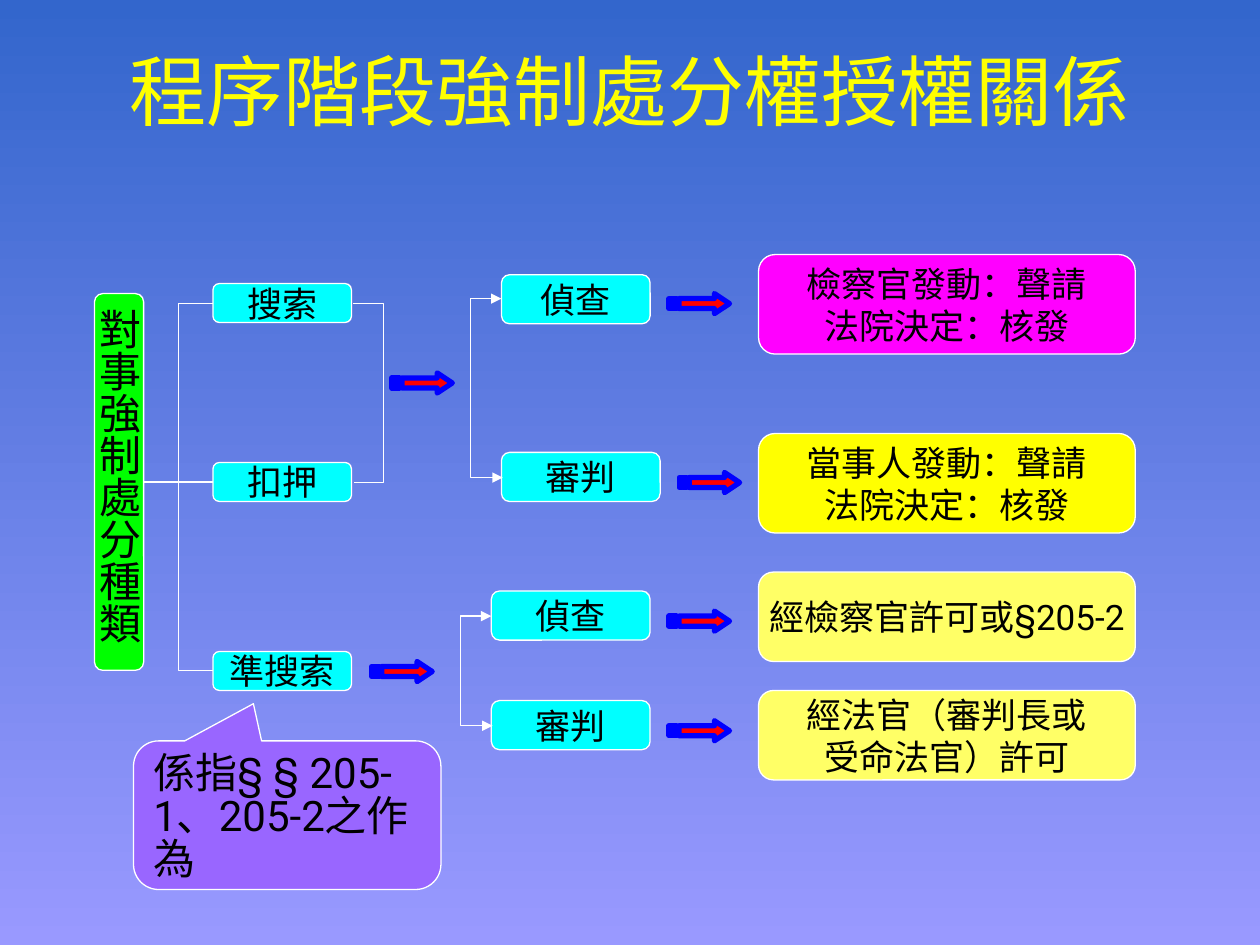
from lxml import etree
from pptx import Presentation
from pptx.dml.color import RGBColor
from pptx.enum.shapes import MSO_CONNECTOR, MSO_SHAPE
from pptx.enum.text import MSO_ANCHOR, PP_ALIGN
from pptx.oxml.ns import qn
from pptx.util import Inches, Pt

BOX, CALLOUT = MSO_SHAPE.FLOWCHART_ALTERNATE_PROCESS, MSO_SHAPE.ROUNDED_RECTANGULAR_CALLOUT
STRAIGHT, ELBOW = MSO_CONNECTOR.STRAIGHT, MSO_CONNECTOR.ELBOW
MIDDLE, TOP = MSO_ANCHOR.MIDDLE, MSO_ANCHOR.TOP
CENTER, LEFT = PP_ALIGN.CENTER, PP_ALIGN.LEFT

COLORS = {name: RGBColor.from_string(value) for name, value in {
    "sky": "3366CC", "lavender": "9999FF", "white": "FFFFFF", "black": "000000",
    "green": "00FF00", "cyan": "00FFFF", "magenta": "FF00FF", "yellow": "FFFF00",
    "pale": "FFFF66", "purple": "9966FF", "red": "FF0000", "blue": "0000FF",
}.items()}


def add_box(left, top, width, height, color, lines, size=20, kind=BOX):
    box = slide.shapes.add_shape(kind, Inches(left), Inches(top), Inches(width), Inches(height))
    box.shadow.inherit = False
    box.fill.solid()
    box.fill.fore_color.rgb = COLORS[color]
    box.line.color.rgb = COLORS["white"]
    box.line.width = Pt(0.75)
    frame = box.text_frame
    frame.word_wrap = kind == CALLOUT
    frame.vertical_anchor = TOP if kind == CALLOUT else MIDDLE
    for index, line in enumerate(lines):
        paragraph = frame.paragraphs[0] if index == 0 else frame.add_paragraph()
        paragraph.alignment = LEFT if kind == CALLOUT else CENTER
        run = paragraph.add_run()
        run.text = line
        run.font.size = Pt(size)
        run.font.name = "Roboto"
        run.font.color.rgb = COLORS["black"]
    return box


def add_link(kind, x1, y1, x2, y2, bend=None, arrows=False):
    link = slide.shapes.add_connector(kind, Inches(x1), Inches(y1), Inches(x2), Inches(y2))
    link.line.color.rgb = COLORS["white"]
    link.line.width = Pt(0.75)
    properties = link._element.spPr
    if bend is not None:
        guides = properties.find(qn("a:prstGeom")).get_or_add_avLst()
        etree.SubElement(guides, qn("a:gd"), name="adj1", fmla=f"val {bend * 100000}")
    if arrows:
        for end in ("a:headEnd", "a:tailEnd"):
            etree.SubElement(properties.find(qn("a:ln")), qn(end), type="triangle")
    etree.SubElement(properties, qn("a:effectLst"))
    return link


prs = Presentation()
prs.slide_width, prs.slide_height = Inches(10), Inches(7.5)
slide = prs.slides.add_slide(prs.slide_layouts[6])

# Background gradient, top to bottom
background = slide.background.fill
background.gradient()
background.gradient_angle = 270
for stop, color, position in zip(background.gradient_stops, ("sky", "lavender"), (0, 1)):
    stop.color.rgb = COLORS[color]
    stop.position = position

# Title
title = slide.shapes.add_textbox(Inches(0.33), Inches(0.25), Inches(9.34), Inches(0.93))
title.text_frame.word_wrap = True
title.text_frame.vertical_anchor = MIDDLE
heading = title.text_frame.paragraphs[0]
heading.alignment = CENTER
heading_run = heading.add_run()
heading_run.text = "程序階段強制處分權授權關係"
heading_run.font.size = Pt(44)
heading_run.font.name = "Arial"
heading_run.font.color.rgb = COLORS["yellow"]

# Root and the three kinds of measure
root = add_box(0.75, 2.33, 0.39, 2.99, "green", ["對事強制處分種類"], 24)
root.text_frame._txBody.bodyPr.set("vert", "eaVert")
measures = [add_box(1.69, top, 1.1, 0.31, "cyan", [label])
            for top, label in ((2.25, "搜索"), (3.67, "扣押"), (5.17, "準搜索"))]

# Links from the root
for y in (2.41, 5.32):
    add_link(ELBOW, 1.14, 3.83, 1.69, y)
seizure_link = add_link(STRAIGHT, 1.14, 3.83, 1.69, 3.83)
seizure_link.begin_connect(root, 3)
seizure_link.end_connect(measures[1], 1)

# Procedural stages
for left, top, width, label in (
    (3.98, 2.18, 1.18, "偵查"), (3.98, 3.59, 1.26, "審判"),
    (3.9, 4.69, 1.26, "偵查"), (3.9, 5.56, 1.26, "審判"),
):
    add_box(left, top, width, 0.39, "cyan", [label])

# Brackets reach 0.25 inch sideways: 25 times their 0.01 inch width
for x, y1, y2, bend, arrows in (
    (2.8, 2.41, 3.83, 25, False),
    (3.98, 2.37, 3.79, -25, True),
    (3.9, 4.89, 5.76, -25, True),
):
    add_link(ELBOW, x, y1, x + 0.01, y2, bend, arrows)

# Who starts and who decides
for top, height, color, lines in (
    (2.02, 0.79, "magenta", ["檢察官發動：聲請", "法院決定：核發"]),
    (3.44, 0.79, "yellow", ["當事人發動：聲請", "法院決定：核發"]),
    (4.54, 0.71, "pale", ["經檢察官許可或§205-2"]),
    (5.48, 0.71, "pale", ["經法官（審判長或", "受命法官）許可"]),
):
    add_box(6.02, top, 2.99, height, color, lines)

# Striped arrows: a head with shaft, then two stripes
ARROW_PARTS = [
    [(0.36, 0), (0.36, 0.04), (0.08, 0.04), (0.08, 0.12), (0.36, 0.12), (0.36, 0.16), (0.48, 0.08)],
    *[[(x1, 0.04), (x1, 0.12), (x2, 0.12), (x2, 0.04)] for x1, x2 in ((0.03, 0.06), (0, 0.02))],
]
for left, top in ((3.11, 2.96), (5.31, 2.33), (5.39, 3.75), (2.95, 5.25), (5.31, 4.85), (5.31, 5.72)):
    outline = None
    for part in ARROW_PARTS:
        points = [(Inches(left + x), Inches(top + y)) for x, y in part]
        if outline is None:
            outline = slide.shapes.build_freeform(*points[0], scale=1.0)
        else:
            outline.move_to(*points[0])
        outline.add_line_segments(points[1:], close=True)
    arrow = outline.convert_to_shape()
    arrow.shadow.inherit = False
    arrow.fill.solid()
    arrow.fill.fore_color.rgb = COLORS["red"]
    arrow.line.color.rgb = COLORS["blue"]
    arrow.line.width = Pt(3)

# Note on quasi-search
note = add_box(1.06, 5.88, 2.44, 1.18, "purple", ["係指§ § 205-1、205-2之作為"], 24, CALLOUT)
note.text_frame.paragraphs[0].line_spacing = 0.85
for index, value in enumerate((-0.11, -0.75, 0.17)):
    note.adjustments[index] = value

prs.save("out.pptx")
